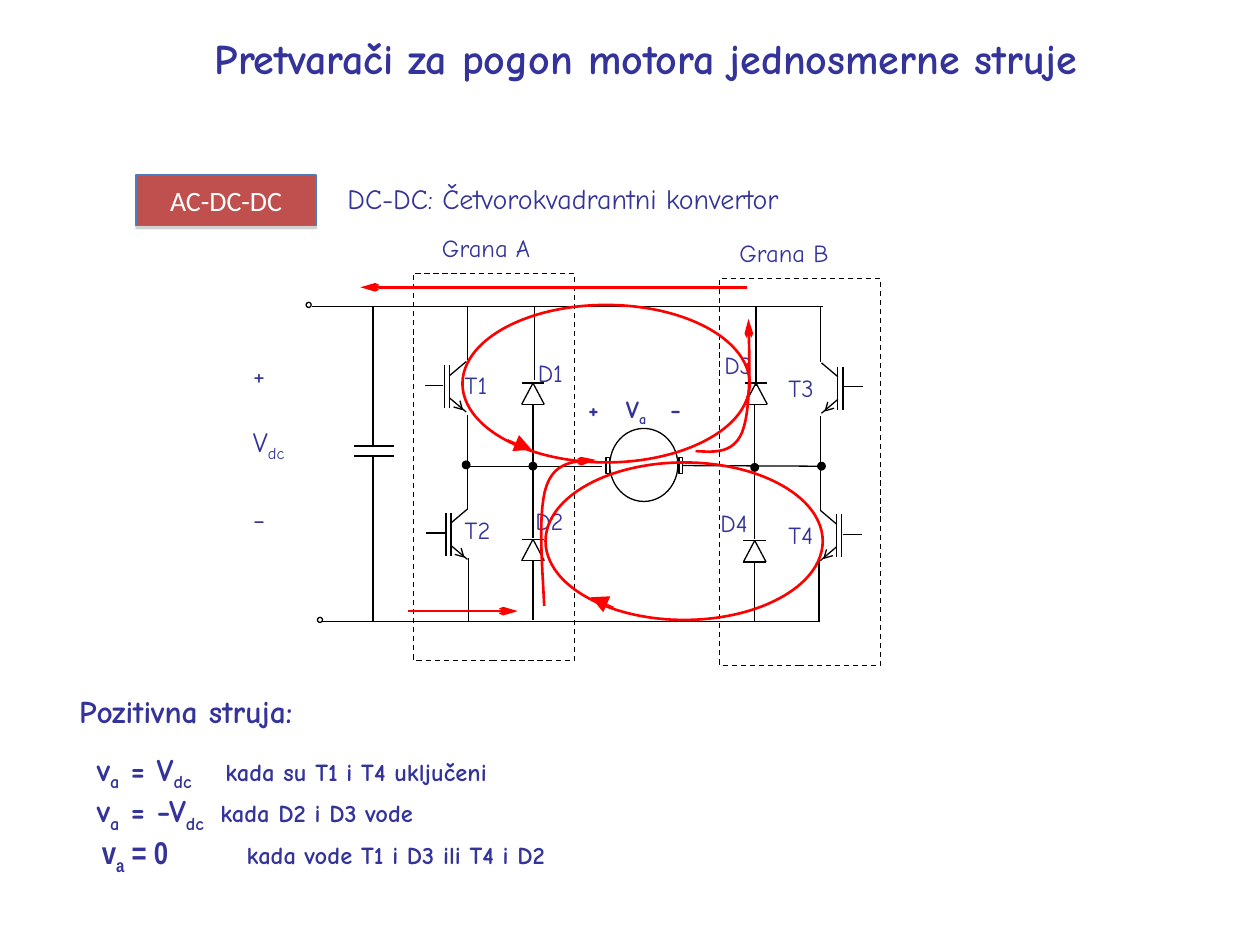
"""Build the slide about the four-quadrant DC-DC converter."""
from lxml.etree import SubElement
from pptx import Presentation
from pptx.dml.color import RGBColor
from pptx.enum.dml import MSO_LINE as Dash
from pptx.enum.shapes import MSO_CONNECTOR as Link, MSO_SHAPE as Kind
from pptx.enum.text import MSO_ANCHOR as Anchor, MSO_AUTO_SIZE as Fit, PP_ALIGN as Align
from pptx.oxml.ns import qn
from pptx.util import Cm, Pt

INDIGO = RGBColor(0x33, 0x33, 0x99)
BLACK = RGBColor(0, 0, 0)
WHITE = RGBColor(255, 255, 255)
RED = RGBColor(255, 0, 0)
BRICK = RGBColor(0xC0, 0x50, 0x4D)
STEEL = RGBColor(0x4A, 0x7E, 0xBB)

SUB = {"sub": True}
SMALL = {"size": Pt(14)}
NARROW = {"name": "Arial Narrow"}
SLIM_ARROW = {"type": "arrow", "w": "sm", "len": "lg"}
WIDE_ARROW = {"type": "triangle", "w": "lg", "len": "lg"}

TRANSISTOR = [
    (.13, -.17, .13, .17), (.17, -.17, .17, .17), (.18, -.01, .33, -.01),
    (0, -.2, .13, -.09), (0, .2, .13, .09),
    (.05, .11, .03, .18), (.1, .16, .03, .18),
]
DIODE = [(-.09, 0, .09, 0), (-.09, .17, .09, .17), (-.09, .17, 0, 0), (.09, .17, 0, 0)]
WIRES = [
    (6.53, 2.43, 2.48, 2.43), (6.5, 4.93, 2.54, 4.93), (4.78, 3.7, 3.72, 3.7),
    (2.81, 3.54, 3.13, 3.54), (2.81, 3.62, 3.13, 3.62),
    (2.96, 2.43, 2.96, 3.53), (2.96, 3.63, 2.96, 4.93),
    (3.71, 2.43, 3.71, 2.86), (3.71, 3.29, 3.71, 4.04), (3.72, 4.43, 3.72, 4.93),
    (4.24, 2.43, 4.24, 3.02), (4.23, 3.21, 4.23, 4.27), (4.23, 4.45, 4.23, 4.92),
    (6, 2.44, 6, 3.06), (5.99, 3.21, 5.99, 4.28), (5.99, 4.46, 5.99, 4.93),
    (6.51, 2.44, 6.51, 2.87), (6.51, 3.3, 6.51, 4.05), (6.5, 4.44, 6.5, 4.94),
]
TRANSISTORS = [(3.7, 3.07, -1), (3.71, 4.24, -1), (6.52, 3.08, 1), (6.51, 4.25, 1)]
DIODES = [(4.23, 3.04), (4.23, 4.28), (6, 3.04), (5.99, 4.29)]
NODES = [(3.67, 3.66), (4.2, 3.67), (6.49, 3.67), (5.96, 3.68)]
TERMINALS = [(2.43, 2.4), (2.52, 4.9)]
BRANCHES = [(3.28, 2.17), (5.71, 2.21)]
BRANCH_NAMES = [("Grana A", 3.41, 1.8), ("Grana B", 5.77, 1.84)]
PART_NAMES = [
    ("T1", 3.59, 2.89), ("T2", 3.59, 4.04), ("T3", 6.16, 2.91), ("T4", 6.16, 4.08),
    ("D1", 4.17, 2.79), ("D2", 4.15, 3.97), ("D3", 5.65, 2.73), ("D4", 5.62, 3.98),
]
CURRENTS = [(5.93, 2.28, 2.86, 2.28), (3.24, 4.85, 4.11, 4.85)]
CURVES = [
    [(4.32, 4.81), (4.3, 4.43), (4.27, 4.04), (4.34, 3.85),
     (4.41, 3.66), (4.57, 3.66), (4.73, 3.65)],
    [(5.52, 3.58), (5.67, 3.59), (5.82, 3.6), (5.89, 3.43),
     (5.96, 3.25), (5.95, 2.89), (5.94, 2.53)],
]
LOOPS = [
    ((3.67, 2.42, 2.28, 1.25), (4.03, 3.49, 4.22, 3.57)),
    ((4.33, 3.67, 2.2, 1.25), (4.87, 4.82, 4.69, 4.74)),
]
EQUATIONS = [
    ((.67, 5.92, 4.12, .4), 1.02,
     [("v", {}), ("a", SUB), (" = V", {}), ("dc", SUB),
      ("\tkada su T1 i T4 uključeni", SMALL)]),
    ((.67, 6.25, 4.12, .4), .98,
     [("v", {}), ("a", SUB), (" = −V", {}), ("dc", SUB), ("\tkada D2 i D3 vode", SMALL)]),
    ((.71, 6.58, 4.24, .4), 1.15,
     [("v", NARROW), ("a", NARROW | SUB), (" = 0", NARROW),
      ("\tkada vode T1 i D3 ili T4 i D2", SMALL)]),
]


def inch(value):
    return Cm(value * 2.54)


def bezier(points, steps=12):
    for start in range(0, len(points) - 1, 3):
        for step in range(1, steps + 1):
            t = step / steps
            weights = ((1 - t) ** 3, 3 * t * (1 - t) ** 2, 3 * t * t * (1 - t), t ** 3)
            group = points[start:start + 4]
            yield tuple(inch(sum(w * p[axis] for w, p in zip(weights, group)))
                        for axis in (0, 1))


class Sketch:
    """Hold the text style and the current page."""

    def __init__(self, page):
        self.page = page
        self.shapes = page.shapes
        self.style = {"name": "Comic Neue", "size": Pt(14), "bold": False}

    def stroke(self, item, color, weight, arrow=None):
        item.line.color.rgb = color
        item.line.width = Pt(weight)
        if arrow:
            outline = item._element.spPr.find(qn("a:ln"))
            SubElement(outline, qn("a:tailEnd"), arrow)

    def wire(self, ends, color=BLACK, weight=.75, arrow=None):
        line = self.shapes.add_connector(Link.STRAIGHT, *map(inch, ends))
        self.stroke(line, color, weight, arrow)
        SubElement(line._element.spPr, qn("a:effectLst"))
        return line

    def symbol(self, strokes, x, y, side=1):
        for x1, y1, x2, y2 in strokes:
            self.wire((x + side * x1, y + y1, x + side * x2, y + y2))

    def shape(self, kind, area, fill=None, color=BLACK, weight=.75):
        shape = self.shapes.add_shape(kind, *map(inch, area))
        shape.shadow.inherit = False
        if fill is None:
            shape.fill.background()
        else:
            shape.fill.solid()
            shape.fill.fore_color.rgb = fill
        self.stroke(shape, color, weight)
        return shape

    def curve(self, points):
        builder = self.shapes.build_freeform(*map(inch, points[0]))
        builder.add_line_segments(list(bezier(points)), close=False)
        curve = builder.convert_to_shape()
        curve.shadow.inherit = False
        curve.fill.background()
        self.stroke(curve, RED, 1.5, SLIM_ARROW)

    def add_spans(self, para, spans, color=INDIGO, tabs=(), **changes):
        for text, extra in spans:
            span = para.add_run()
            span.text = text
            values = self.style | changes | extra
            if values.pop("sub", False):
                span._r.get_or_add_rPr().set("baseline", "-25000")
            for key, value in values.items():
                setattr(span.font, key, value)
            span.font.color.rgb = color
        if tabs:
            stops = SubElement(para._p.get_or_add_pPr(), qn("a:tabLst"))
            for stop in tabs:
                SubElement(stops, qn("a:tab"), {"pos": str(inch(stop)), "algn": "l"})

    def label(self, area, spans, anchor=Anchor.TOP, **changes):
        box = self.shapes.add_textbox(*map(inch, area))
        box.text_frame.word_wrap = True
        box.text_frame.vertical_anchor = anchor
        self.add_spans(box.text_frame.paragraphs[0], spans, **changes)
        return box

    def title(self, area, text):
        box = self.shapes.title
        for key, value in zip(("left", "top", "width", "height"), area):
            setattr(box, key, inch(value))
        frame = box.text_frame
        for key, value in {"vertical_anchor": Anchor.TOP, "auto_size": Fit.NONE}.items():
            setattr(frame, key, value)
        frame.paragraphs[0].alignment = Align.CENTER
        self.add_spans(frame.paragraphs[0], [(text, {})], size=Pt(24), bold=True)

    def badge(self, area, text):
        badge = self.shape(Kind.RECTANGLE, area, BRICK, STEEL)
        effects = badge._element.spPr.find(qn("a:effectLst"))
        shadow = SubElement(effects, qn("a:outerShdw"),
                            {"dist": str(Pt(1.8)), "dir": "5400000", "rotWithShape": "0"})
        tint = SubElement(shadow, qn("a:srgbClr"), {"val": "808080"})
        SubElement(tint, qn("a:alpha"), {"val": "35000"})
        para = badge.text_frame.paragraphs[0]
        para.alignment = Align.CENTER
        self.add_spans(para, [(text, {})], WHITE, name="Calibri", size=Pt(16))


def draw_circuit(sketch):
    for ends in WIRES:
        sketch.wire(ends)
    for place in TRANSISTORS:
        sketch.symbol(TRANSISTOR, *place)
    for place in DIODES:
        sketch.symbol(DIODE, *place)
    for places, size, fill in ((NODES, .06, BLACK), (TERMINALS, .04, WHITE)):
        for x, y in places:
            sketch.shape(Kind.OVAL, (x, y, size, size), fill)
    sketch.shape(Kind.OVAL, (4.84, 3.4, .54, .58), WHITE)
    for x in (4.81, 5.39):
        brush = sketch.shape(Kind.RECTANGLE, (x, 3.63, .03, .13), WHITE)
    sketch.wire((5.42, 3.7, 6.5, 3.7)).begin_connect(brush, 3)
    for x, y in BRANCHES:
        sketch.shape(Kind.RECTANGLE, (x, y, 1.28, 3.07)).line.dash_style = Dash.DASH


def draw_labels(sketch):
    for text, x, y in BRANCH_NAMES:
        sketch.label((x, y, 1.2, .41), [(text, {})])
    for text, x, y in PART_NAMES:
        sketch.label((x, y, .7, .41), [(text, {})])
    sketch.label((4.57, 3.08, 1.16, .49), [("+\tV", {}), ("a", SUB), ("\t−", {})],
                 tabs=(.3, .65), bold=True)
    supply = sketch.label((1.91, 2.79, .7, 1.72), [("+", {})], size=Pt(16))
    for spans, gap in (([("V", {}), ("dc", SUB)], 19), ([("−", {})], 22)):
        para = supply.text_frame.add_paragraph()
        para.space_before = Pt(gap)
        sketch.add_spans(para, spans, size=Pt(16))
    for area, stop, spans in EQUATIONS:
        sketch.label(area, spans, Anchor.MIDDLE, tabs=(stop,), size=Pt(18), bold=True)
    sketch.label((.53, 5.44, 2.13, .4), [("Pozitivna struja:", {})], size=Pt(18), bold=True)
    sketch.label((2.66, 1.39, 3.83, .37),
                 [("DC-DC: Četvorokvadrantni konvertor", {})], size=Pt(16))


def draw_currents(sketch):
    for ends in CURRENTS:
        sketch.wire(ends, RED, 1.5, SLIM_ARROW)
    for points in CURVES:
        sketch.curve(points)
    for area, ends in LOOPS:
        sketch.shape(Kind.OVAL, area, None, RED, 1.5)
        sketch.wire(ends, RED, .75, WIDE_ARROW)


def main():
    deck = Presentation()
    deck.slide_width, deck.slide_height = inch(10), inch(7.5)
    sketch = Sketch(deck.slides.add_slide(deck.slide_layouts[5]))
    sketch.title((1.01, .21, 8.23, .5), "Pretvarači za pogon motora jednosmerne struje")
    draw_circuit(sketch)
    draw_labels(sketch)
    draw_currents(sketch)
    sketch.badge((1.08, 1.39, 1.43, .4), "AC-DC-DC")
    deck.save("out.pptx")


if __name__ == "__main__":
    main()
